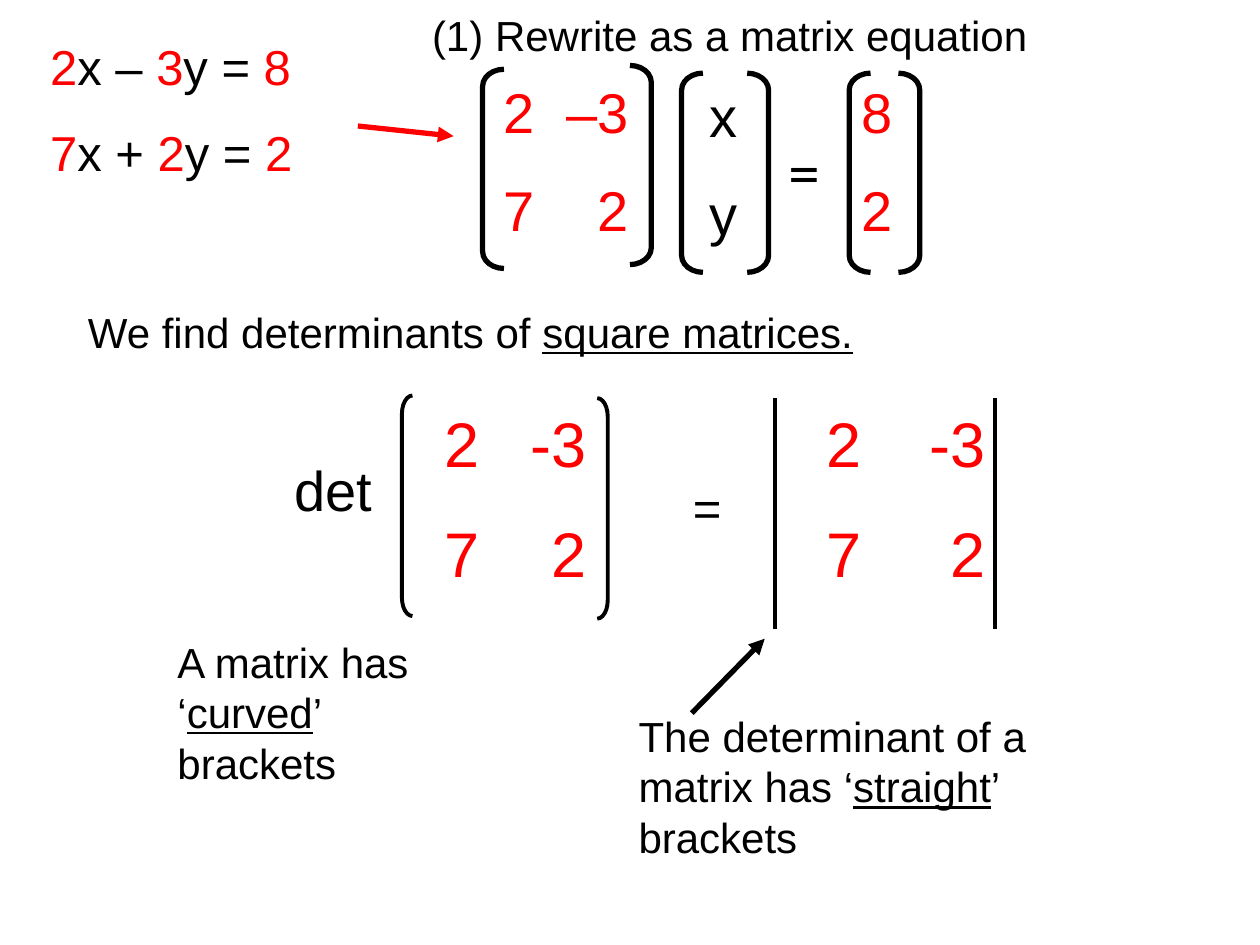
import pptx
import pptx.dml.color
import pptx.enum.shapes
import pptx.oxml
import pptx.oxml.ns
import pptx.util

Pt = pptx.util.Pt
SHAPE = pptx.enum.shapes.MSO_SHAPE
COLORS = {
    name: pptx.dml.color.RGBColor.from_string(value)
    for name, value in {"number": "FF0000", "ink": "000000"}.items()
}

deck = pptx.Presentation()
deck.slide_width, deck.slide_height = Pt(720), Pt(540)
slide = deck.slides.add_slide(deck.slide_layouts[6])


def add_text(box, size, lines, tabs=(), font="Arial", line_spacing=None):
    """Write lines of (text, colour, underlined) runs; tabs are (position, alignment)."""
    frame = slide.shapes.add_textbox(*map(Pt, box)).text_frame
    frame.word_wrap = True
    for index, line in enumerate(lines):
        paragraph = frame.paragraphs[0] if index == 0 else frame.add_paragraph()
        if index:
            paragraph.space_before = Pt(round(size * 0.55, 1))
        if line_spacing:
            paragraph.line_spacing = line_spacing
        if tabs:
            stops = pptx.oxml.parse_xml(
                f"<a:tabLst {pptx.oxml.ns.nsdecls('a')}>"
                + "".join(f'<a:tab pos="{Pt(pos)}" algn="{align}"/>' for pos, align in tabs)
                + "</a:tabLst>"
            )
            paragraph._p.get_or_add_pPr().append(stops)
        for text, color, underlined in line:
            run = paragraph.add_run()
            run.text = text
            run.font.name, run.font.size = font, Pt(size)
            run.font.color.rgb = COLORS[color]
            run.font.underline = underlined


def add_line(start, end, color, width, arrow=False):
    line = slide.shapes.add_connector(
        pptx.enum.shapes.MSO_CONNECTOR.STRAIGHT, *map(Pt, start + end)
    )
    line.line.color.rgb = COLORS[color]
    line.line.width = Pt(width)
    namespace = pptx.oxml.ns.nsdecls("a")
    if arrow:
        line.line._get_or_add_ln().append(
            pptx.oxml.parse_xml(f'<a:tailEnd {namespace} type="triangle"/>')
        )
    line._element.spPr.append(pptx.oxml.parse_xml(f"<a:effectLst {namespace}/>"))


# Simultaneous equations, with coefficients picked out
equations = [("2", "x – ", "3", "y = ", "8"), ("7", "x + ", "2", "y = ", "2")]
add_text((21.6, 17.3, 282, 92), 28, [
    [(part, "ink" if i % 2 else "number", False) for i, part in enumerate(equation)]
    for equation in equations
])

# Matrices, each row set out on tab stops
matrices = [
    ((280.8, 41, 324, 104), 32, ["2\t–3\t8", "7\t2\t2"], "number", [(71.2, "r"), (204.6, "l")]),
    ((398.2, 43.2, 57, 104), 32, ["x", "y"], "ink", []),
    ((247, 227.5, 130, 122), 36, ["2\t-3", "7\t2"], "number", [(81, "r")]),
    ((465, 227.5, 140, 122), 36, ["2\t-3", "7\t2"], "number", [(91, "r")]),
]
for box, size, rows, color, tabs in matrices:
    add_text(box, size, [[(row, color, False)] for row in rows], tabs)

# Curved brackets: left, top, width, height, curve, line width
LEFT, RIGHT = SHAPE.LEFT_BRACKET, SHAPE.RIGHT_BRACKET
brackets = [
    (LEFT, 275.8, 39.6, 12.2, 113.8, 0.79, 3),
    (RIGHT, 360, 37.4, 12.2, 113.8, 0.79, 3),
    (LEFT, 389.5, 41.8, 12.2, 113.8, 0.79, 3),
    (RIGHT, 427, 41.8, 12.2, 113.8, 0.79, 3),
    (LEFT, 485.3, 41.8, 12.2, 113.8, 0.79, 3),
    (RIGHT, 513.4, 41.8, 12.2, 113.8, 0.79, 3),
    (LEFT, 229.7, 226, 6, 126, 1.75, 2.25),
    (RIGHT, 341.3, 227.5, 6, 126, 1.75, 2.25),
]
for kind, left, top, width, height, curve, weight in brackets:
    bracket = slide.shapes.add_shape(kind, Pt(left), Pt(top), Pt(width), Pt(height))
    bracket.adjustments[0] = curve
    bracket.shadow.inherit = False
    bracket.fill.background()
    bracket.line.color.rgb = COLORS["ink"]
    bracket.line.width = Pt(weight)

# Straight determinant bars and pointers
for bar_x in (442.8, 568.8):
    add_line((bar_x, 227.5), (bar_x, 359.3), "ink", 2.25)
add_line((204.5, 72), (259.2, 77.8), "number", 3, arrow=True)
add_line((395.3, 407.5), (437, 365), "ink", 3, arrow=True)

# Symbols and explanations
add_text((443.5, 72, 36, 51), 36, [[("=", "ink", False)]], font="Calibri")
add_text((388.8, 269.3, 66, 41), 28, [[("=", "ink", False)]])
add_text((161.3, 257, 66, 45), 32, [[("det", "ink", False)]])
add_text((239.8, 5, 378.7, 55.4), 24,
         [[("(1) Rewrite as a matrix equation", "ink", False)]], line_spacing=0.9)
explanations = [
    ((43.2, 171.4, 657.4, 36), "We find determinants of ", "square matrices.", ""),
    ((94.3, 360, 162, 94.3), "A matrix has ‘", "curved", "’ brackets"),
    ((357.8, 402.5, 257.8, 94.3), "The determinant of a matrix has ‘", "straight", "’ brackets"),
]
for box, before, key_word, after in explanations:
    runs = [(before, "ink", False), (key_word, "ink", True), (after, "ink", False)]
    add_text(box, 24, [[run for run in runs if run[0]]])

deck.save("out.pptx")
